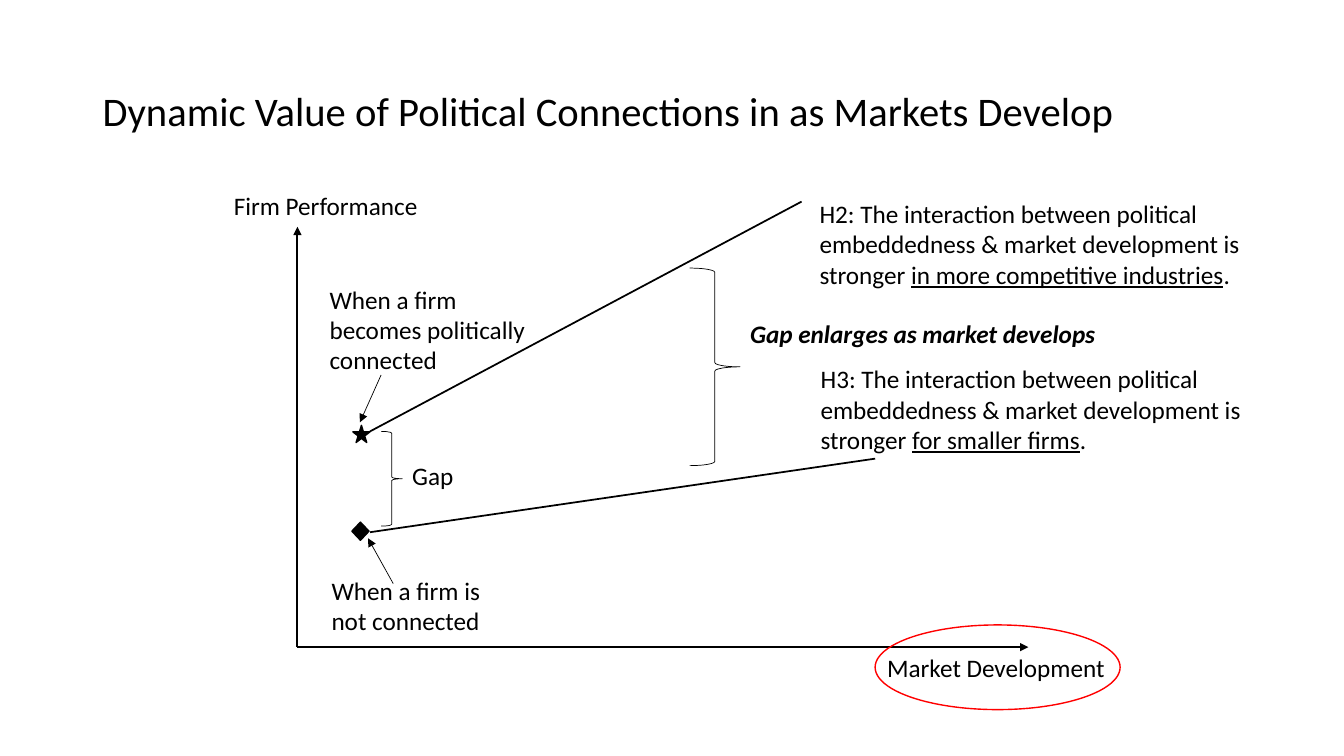
from typing import NamedTuple, Optional

from pptx import Presentation
from pptx import util as u
from pptx.dml.color import RGBColor
from pptx.enum import shapes, text
from pptx.oxml.ns import qn
from lxml import etree

FONT = "Calibri"
BLACK = "000000"
RED = "FF0000"
ORIGIN = (2.95, 6.42)


class Run(NamedTuple):
    words: str
    underline: bool = False
    emphasis: bool = False  # bold italic


class Label(NamedTuple):
    left: float
    top: float
    width: float
    height: float
    runs: list[Run]
    wrap: bool = True
    size: float = 18
    anchor: text.MSO_ANCHOR = text.MSO_ANCHOR.TOP
    line_spacing: float = 1.0


class Line(NamedTuple):
    start: tuple[float, float]
    end: tuple[float, float]
    weight: float
    arrow: bool = False


class Mark(NamedTuple):
    kind: shapes.MSO_SHAPE
    left: float
    top: float
    width: float
    height: float
    weight: float = 1
    fill: Optional[str] = None
    outline: str = BLACK


def hypothesis(number: int, condition: str, left: float, top: float) -> Label:
    opening = (f"H{number}: The interaction between political embeddedness "
               "& market development is stronger ")
    return Label(left, top, 4.42, 1.31,
                 [Run(opening), Run(condition, underline=True), Run(".")])


LINES = [
    Line(ORIGIN, (2.95, 2.25), 1.5, arrow=True),
    Line(ORIGIN, (10.2, 6.42), 1.5, arrow=True),
    Line((3.78, 3.72), (3.57, 4.19), 0.5, arrow=True),
    Line((3.9, 5.79), (3.65, 5.34), 0.5, arrow=True),
    Line((3.67, 4.28), (7.95, 2), 1.25),
    Line((3.67, 5.28), (8.68, 4.55), 1.25),
]

MARKS = [
    Mark(shapes.MSO_SHAPE.STAR_5_POINT, 3.5, 4.22, 0.17, 0.17, fill=BLACK),
    Mark(shapes.MSO_SHAPE.DIAMOND, 3.49, 5.18, 0.17, 0.18, fill=BLACK),
    Mark(shapes.MSO_SHAPE.RIGHT_BRACE, 3.78, 4.28, 0.21, 0.94, weight=0.5),
    Mark(shapes.MSO_SHAPE.RIGHT_BRACE, 6.84, 2.66, 0.5, 1.96, weight=0.5),
    Mark(shapes.MSO_SHAPE.OVAL, 8.68, 6.2, 2.43, 0.84, outline=RED),
]

LABELS = [
    Label(0.92, 0.4, 11.5, 1.45,
          [Run("Dynamic Value of Political Connections in as Markets Develop")],
          size=29, anchor=text.MSO_ANCHOR.MIDDLE, line_spacing=0.9),
    Label(2.22, 1.84, 2.02, 0.4, [Run("Firm Performance")], wrap=False),
    Label(3.17, 2.77, 2.21, 1.01,
          [Run("When a firm becomes politically connected")]),
    Label(3.19, 5.66, 2.04, 0.71, [Run("When a firm is not connected")]),
    Label(3.99, 4.52, 0.61, 0.4, [Run("Gap")], wrap=False),
    Label(8.7, 6.42, 2.67, 0.4, [Run("Market Development")]),
    Label(7.34, 3.11, 4.02, 0.4,
          [Run("Gap enlarges as market develops", emphasis=True)]),
    hypothesis(2, "in more competitive industries", 8.03, 1.92),
    hypothesis(3, "for smaller firms", 8.04, 3.56),
]


def rgb(value: str) -> RGBColor:
    return RGBColor.from_string(value)


def draw_line(slide, line: Line) -> None:
    connector = slide.shapes.add_connector(
        shapes.MSO_CONNECTOR.STRAIGHT,
        *(u.Inches(value) for value in (*line.start, *line.end)))
    connector.line.color.rgb = rgb(BLACK)
    connector.line.width = u.Pt(line.weight)
    if line.arrow:
        etree.SubElement(connector.line._get_or_add_ln(), qn("a:tailEnd"),
                         type="triangle")
    etree.SubElement(connector._element.spPr, qn("a:effectLst"))


def draw_mark(slide, mark: Mark) -> None:
    shape = slide.shapes.add_shape(
        mark.kind, u.Inches(mark.left), u.Inches(mark.top),
        u.Inches(mark.width), u.Inches(mark.height))
    shape.shadow.inherit = False
    shape.line.color.rgb = rgb(mark.outline)
    shape.line.width = u.Pt(mark.weight)
    if mark.fill:
        shape.fill.solid()
        shape.fill.fore_color.rgb = rgb(mark.fill)
    else:
        shape.fill.background()


def draw_label(slide, label: Label) -> None:
    frame = slide.shapes.add_textbox(
        u.Inches(label.left), u.Inches(label.top),
        u.Inches(label.width), u.Inches(label.height)).text_frame
    frame.word_wrap = label.wrap
    frame.vertical_anchor = label.anchor
    paragraph = frame.paragraphs[0]
    paragraph.line_spacing = label.line_spacing
    for part in label.runs:
        run = paragraph.add_run()
        run.text = part.words
        run.font.name = FONT
        run.font.size = u.Pt(label.size)
        run.font.color.rgb = rgb(BLACK)
        run.font.underline = part.underline
        run.font.bold = run.font.italic = part.emphasis


def main() -> None:
    deck = Presentation()
    deck.slide_width = u.Inches(13.33)
    deck.slide_height = u.Inches(7.5)
    slide = deck.slides.add_slide(deck.slide_layouts[6])
    for line in LINES:
        draw_line(slide, line)
    for mark in MARKS:
        draw_mark(slide, mark)
    for label in LABELS:
        draw_label(slide, label)
    deck.save("out.pptx")


if __name__ == "__main__":
    main()
